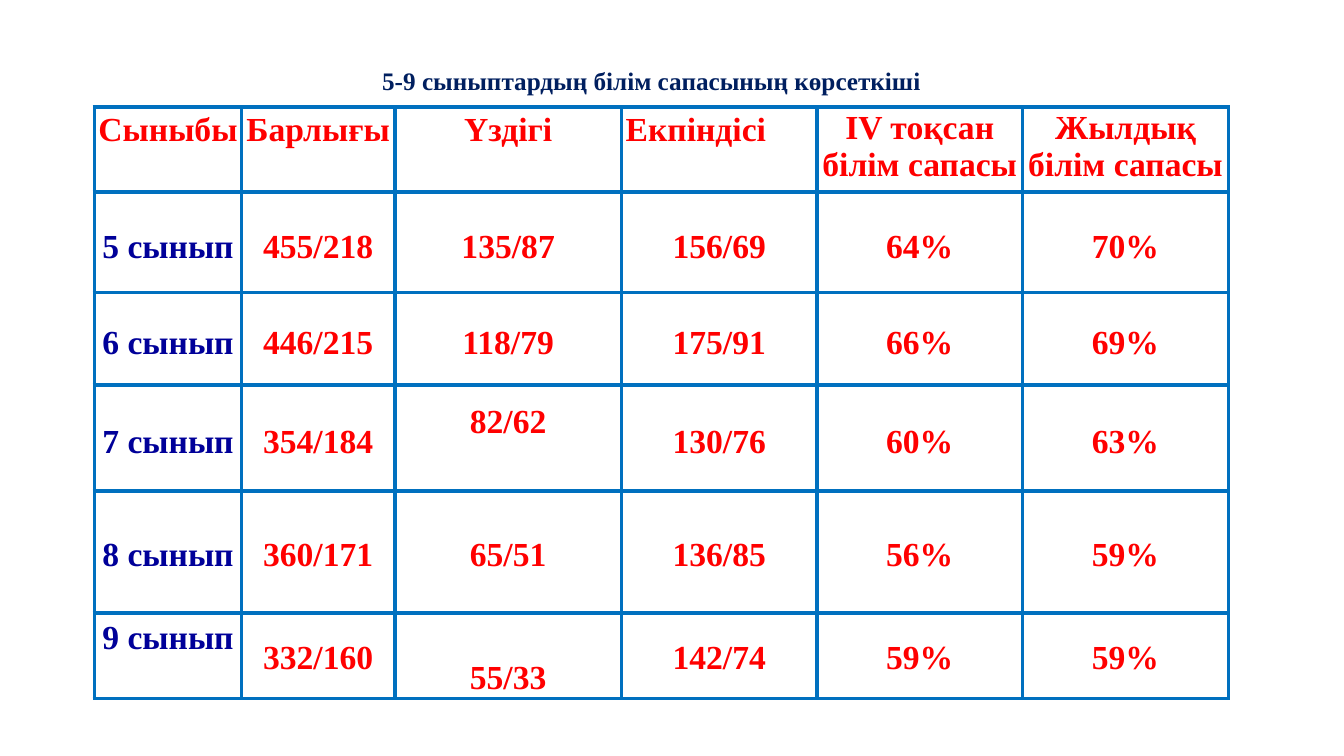
from lxml import etree
from pptx import Presentation
from pptx.dml.color import RGBColor
from pptx.enum import text
from pptx.oxml import ns
from pptx.util import Pt

FONT = "Times New Roman"
COLORS = {"title": "001F5F", "value": "FF0000", "grade": "000099", "border": "0070BF"}
COL_WIDTHS = [105, 109.5, 162, 139.5, 147, 147]
ROW_HEIGHTS = [60.5, 72, 66, 75.5, 87.5, 61]
ROWS = [
    ["Сыныбы", "Барлығы", "Үздігі", "Екпіндісі", "IV тоқсан білім сапасы", "Жылдық білім сапасы"],
    ["5 сынып", "455/218", "135/87", "156/69", "64%", "70%"],
    ["6 сынып", "446/215", "118/79", "175/91", "66%", "69%"],
    ["7 сынып", "354/184", "82/62", "130/76", "60%", "63%"],
    ["8 сынып", "360/171", "65/51", "136/85", "56%", "59%"],
    ["9 сынып", "332/160", "55/33", "142/74", "59%", "59%"],
]
# Space above the text: one value per row, with the cells that differ
ROW_TOPS = [3, 26, 23, 27.5, 33, 19]
CELL_TOPS = {(0, 4): 2, (0, 5): 2, (3, 2): 13.5, (5, 0): 4.5, (5, 2): 33}


def style_paragraph(p, size, color, align):
    p.alignment = align
    p.font.name = FONT
    p.font.size = Pt(size)
    p.font.bold = True
    p.font.color.rgb = RGBColor.from_string(COLORS[color])


def set_borders(cell, width):
    tc_pr = cell._tc.get_or_add_tcPr()
    for side in ("lnL", "lnR", "lnT", "lnB"):
        ln = etree.SubElement(tc_pr, ns.qn(f"a:{side}"), w=str(Pt(width)))
        fill = etree.SubElement(ln, ns.qn("a:solidFill"))
        etree.SubElement(fill, ns.qn("a:srgbClr"), val=COLORS["border"])


def fill_cell(cell, content, top, color, align, left=0):
    cell.margin_left, cell.margin_top = Pt(left), Pt(top)
    cell.margin_right = cell.margin_bottom = 0
    cell.text = content
    style_paragraph(cell.text_frame.paragraphs[0], 24, color, align)
    set_borders(cell, 3)
    cell.fill.background()


def add_title(s, content):
    tf = s.shapes.add_textbox(Pt(273), Pt(45.5), Pt(390), Pt(24)).text_frame
    tf.word_wrap = True
    tf.margin_left = tf.margin_right = tf.margin_bottom = 0
    tf.margin_top = Pt(1)
    tf.text = content
    style_paragraph(tf.paragraphs[0], 18, "title", text.PP_ALIGN.LEFT)


def add_results_table(s):
    table = s.shapes.add_table(len(ROWS), len(COL_WIDTHS), Pt(67.5), Pt(76.5),
                               Pt(sum(COL_WIDTHS)), Pt(sum(ROW_HEIGHTS))).table
    table.first_row = table.horz_banding = False
    for column, width in zip(table.columns, COL_WIDTHS):
        column.width = Pt(width)
    for i, values in enumerate(ROWS):
        table.rows[i].height = Pt(ROW_HEIGHTS[i])
        for j, value in enumerate(values):
            top = CELL_TOPS.get((i, j), ROW_TOPS[i])
            color = "grade" if i and j == 0 else "value"
            if (i, j) == (0, 3):
                fill_cell(table.cell(i, j), value, top, color, text.PP_ALIGN.LEFT, left=3)
            else:
                fill_cell(table.cell(i, j), value, top, color, text.PP_ALIGN.CENTER)


def main():
    prs = Presentation()
    prs.slide_width, prs.slide_height = Pt(960), Pt(540)
    s = prs.slides.add_slide(prs.slide_layouts[6])
    add_results_table(s)
    add_title(s, "5-9 сыныптардың білім сапасының көрсеткіші")
    prs.save("out.pptx")


if __name__ == "__main__":
    main()
